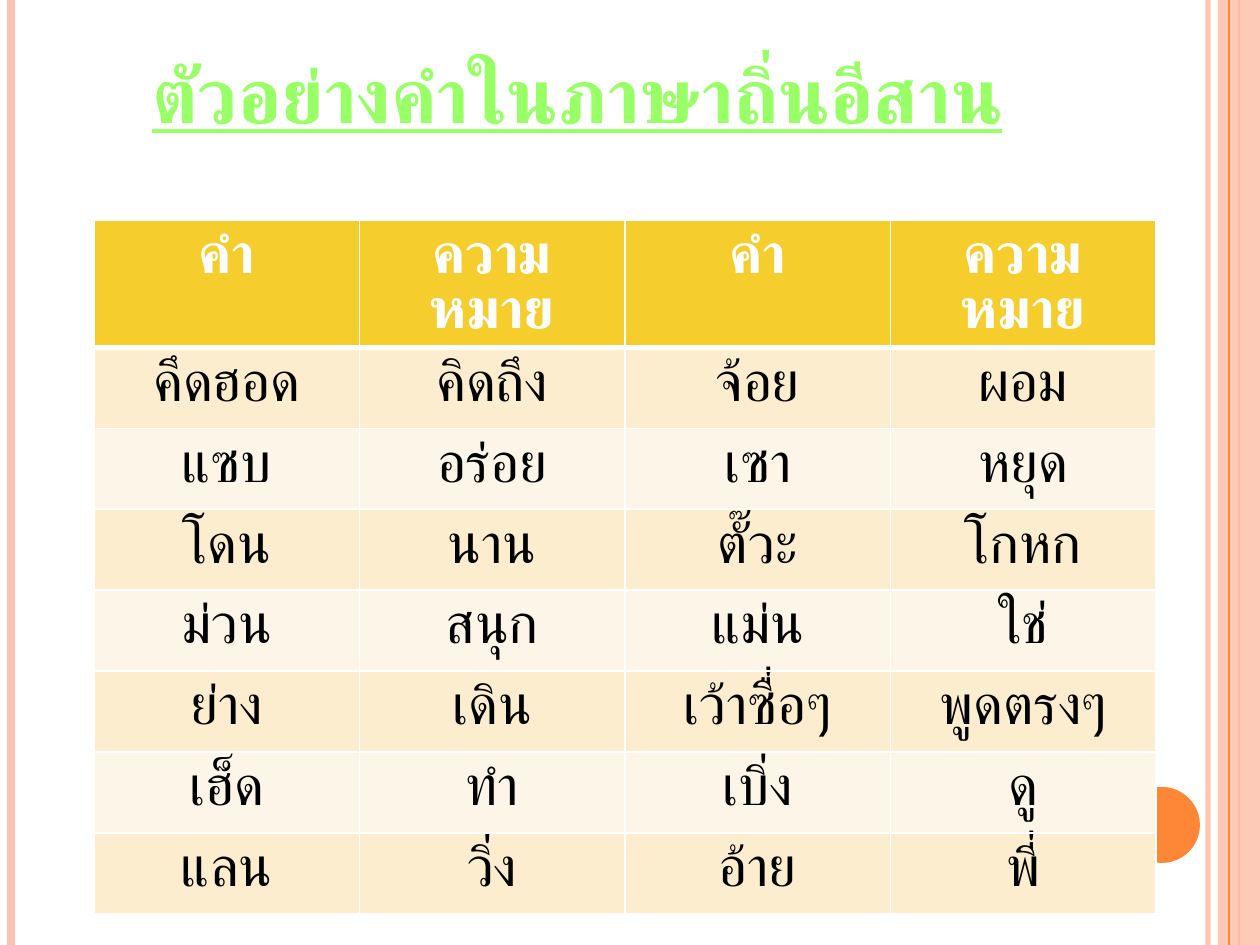
from lxml.etree import SubElement
from pptx import Presentation
from pptx.dml.color import RGBColor
from pptx.enum.shapes import MSO_CONNECTOR as CONNECTOR, MSO_SHAPE as SHAPE
from pptx.enum.text import MSO_ANCHOR as ANCHOR, PP_ALIGN as ALIGN
from pptx.oxml.ns import qn
from pptx.util import Pt

SCALE = 914400 / 126
SLIDE_W, SLIDE_H = 1260, 945
FONT = "Cambria"
COLORS = {
    "peach": "FEC3AE", "orange": "FE8637", "title": "99FF66",
    "header": "F5CD2D", "odd": "FBEDCD", "even": "FDF6E8",
    "white": "FFFFFF", "black": "000000",
}
STRIPES = [
    (1208, "peach", 3, 93),
    (11, "peach", 4.5, 100),
    (1239, "orange", 1.5, 100),
]
VOCABULARY = [
    ("คำ", "ความหมาย", "คำ", "ความหมาย"),
    ("คึดฮอด", "คิดถึง", "จ้อย", "ผอม"),
    ("แซบ", "อร่อย", "เซา", "หยุด"),
    ("โดน", "นาน", "ตั๊วะ", "โกหก"),
    ("ม่วน", "สนุก", "แม่น", "ใช่"),
    ("ย่าง", "เดิน", "เว้าซื่อๆ", "พูดตรงๆ"),
    ("เฮ็ด", "ทำ", "เบิ่ง", "ดู"),
    ("แลน", "วิ่ง", "อ้าย", "พี่"),
]


def px(length):
    return round(length * SCALE)


def rgb(name):
    return RGBColor.from_string(COLORS[name])


def paint(fill, color, opacity=100):
    fill.solid()
    fill.fore_color.rgb = rgb(color)
    if opacity < 100:
        tint = fill._xPr.find(".//" + qn("a:srgbClr"))
        SubElement(tint, qn("a:alpha"), val=str(opacity * 1000))


def add_stripe(slide, x, color, weight, opacity=100):
    stripe = slide.shapes.add_connector(
        CONNECTOR.STRAIGHT, px(x), 0, px(x), px(SLIDE_H))
    stripe.line.width = Pt(weight)
    paint(stripe.line.fill, color, opacity)
    SubElement(stripe._element.spPr, qn("a:effectLst"))


def add_decoration(slide, kind, box, color, opacity=100):
    decoration = slide.shapes.add_shape(kind, *map(px, box))
    decoration.shadow.inherit = False
    decoration.line.fill.background()
    paint(decoration.fill, color, opacity)


def write(frame, words, size, color, bold):
    frame.text = words
    paragraph = frame.paragraphs[0]
    paragraph.alignment = ALIGN.CENTER
    run = paragraph.runs[0]
    run.font.name = FONT
    run.font.size = Pt(size)
    run.font.bold = bold
    run.font.color.rgb = rgb(color)
    SubElement(run.font._element, qn("a:cs"), typeface=FONT)
    return run


def add_title(slide, words):
    title = slide.shapes.add_textbox(*map(px, (63, 38, 1029, 107)))
    frame = title.text_frame
    frame.word_wrap = True
    frame.vertical_anchor = ANCHOR.BOTTOM
    run = write(frame, words, 44, "title", True)
    run.font.underline = True
    run.font._element.set("cap", "small")


def add_borders(cell, top, bottom):
    properties = cell._tc.get_or_add_tcPr()
    for side, weight in (("L", 1), ("R", 1), ("T", top), ("B", bottom)):
        border = SubElement(properties, qn(f"a:ln{side}"), w=str(Pt(weight)))
        ink = SubElement(border, qn("a:solidFill"))
        SubElement(ink, qn("a:srgbClr"), val=COLORS["white"])


def add_vocabulary(slide):
    rows, columns = len(VOCABULARY), len(VOCABULARY[0])
    table = slide.shapes.add_table(
        rows, columns, px(94), px(220), px(1062), px(81 * rows)).table
    for r, entries in enumerate(VOCABULARY):
        is_header = r == 0
        band = "header" if is_header else ("even", "odd")[r % 2]
        for c, words in enumerate(entries):
            cell = table.cell(r, c)
            cell.margin_top, cell.margin_bottom = px(10), px(3)
            add_borders(cell, 3 if r == 1 else 1, 3 if is_header else 1)
            paint(cell.fill, band)
            write(cell.text_frame, words, 32,
                  "white" if is_header else "black", is_header)
            cell.text_frame.paragraphs[0].line_spacing = 0.85


def main():
    deck = Presentation()
    deck.slide_width, deck.slide_height = px(SLIDE_W), px(SLIDE_H)
    slide = deck.slides.add_slide(deck.slide_layouts[6])
    for stripe in STRIPES:
        add_stripe(slide, *stripe)
    add_decoration(slide, SHAPE.RECTANGLE, (1218, 0, 42, SLIDE_H), "peach", 87)
    add_stripe(slide, 1229, "orange", 0.75)
    add_decoration(slide, SHAPE.OVAL, (1124, 787, 76, 76), "orange")
    add_title(slide, "ตัวอย่างคำในภาษาถิ่นอีสาน")
    add_vocabulary(slide)
    deck.save("out.pptx")


if __name__ == "__main__":
    main()
